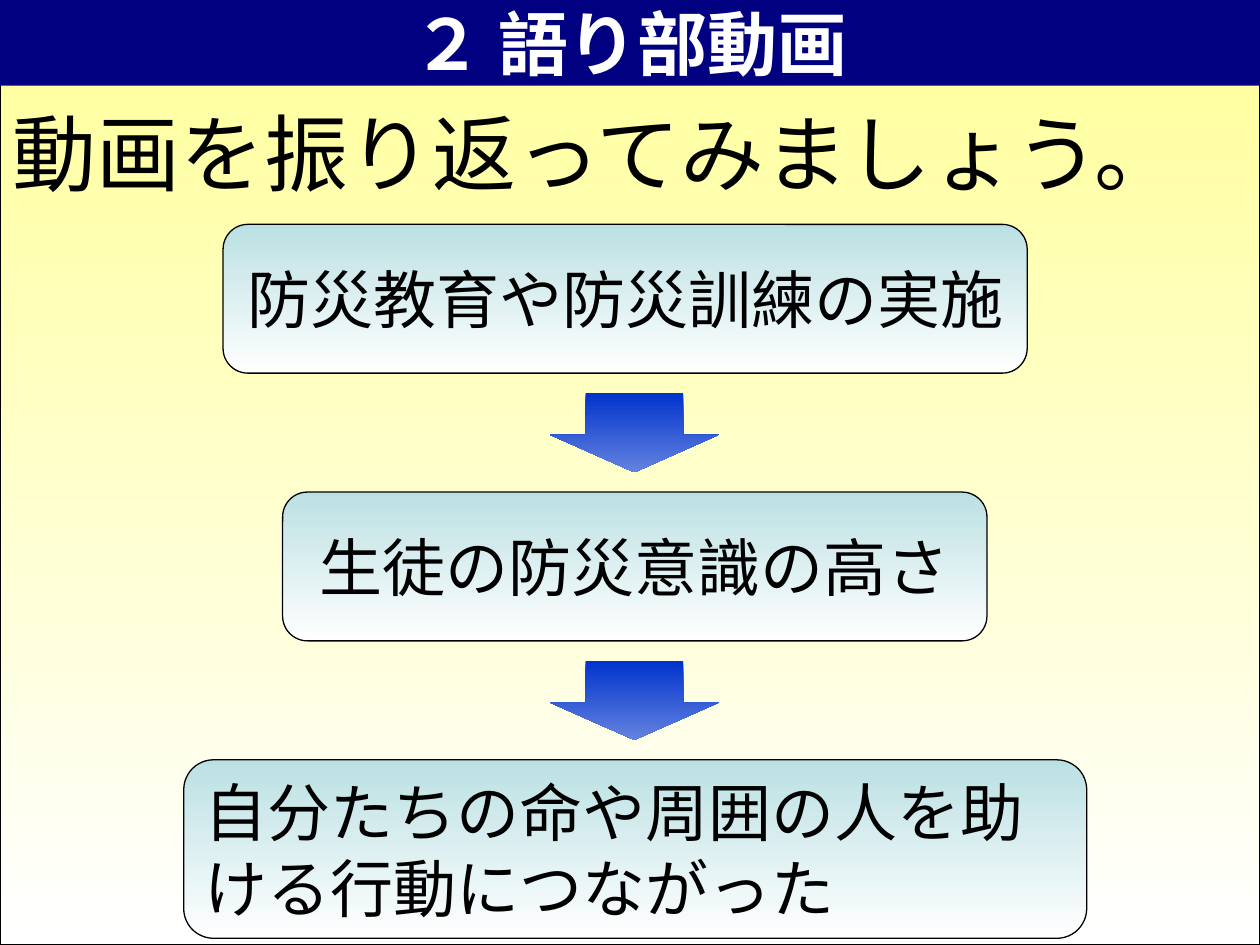
from pptx import Presentation
from pptx.dml.color import RGBColor
from pptx.enum.shapes import MSO_SHAPE
from pptx.enum.text import MSO_ANCHOR, PP_ALIGN
from pptx.oxml.ns import qn
from pptx.util import Pt
from lxml import etree

RECT, ROUND, ARROW = MSO_SHAPE.RECTANGLE, MSO_SHAPE.ROUNDED_RECTANGLE, MSO_SHAPE.RIGHT_ARROW
LEFT, CENTER = PP_ALIGN.LEFT, PP_ALIGN.CENTER
TOP, MIDDLE = MSO_ANCHOR.TOP, MSO_ANCHOR.MIDDLE
LATIN, ASIAN = "Arial", "Noto Sans CJK JP"

WIDE, HIGH = 720, 540
TITLE = "２ 語り部動画"
LEAD = "動画を振り返ってみましょう。"
STEPS = [
    ("防災教育や防災訓練の実施", 127.5, 459.5, 85, CENTER, False),
    ("生徒の防災意識の高さ", 161.5, 402.5, 85, CENTER, False),
    ("自分たちの命や周囲の人を助ける行動につながった", 105, 516, 102, LEFT, True),
]
FIRST, PITCH = 128.2, 153
LONG, THICK, GAP = 45.4, 96.5, 11.3


def color(code):
    return RGBColor.from_string(code)


def blend(shape, start, end, angle):
    shape.fill.gradient()
    shape.fill.gradient_angle = angle
    for stop, code in zip(shape.fill.gradient_stops, (start, end)):
        stop.color.rgb = color(code)


def add(kind, x, y, w, h, edge=None):
    shape = slide.shapes.add_shape(kind, Pt(x), Pt(y), Pt(w), Pt(h))
    shape.shadow.inherit = False
    if edge:
        shape.line.color.rgb = color(edge)
        shape.line.width = Pt(0.75)
    else:
        shape.line.fill.background()
    return shape


def write(shape, text, size, ink="000000", align=LEFT, anchor=MIDDLE,
          wrap=True, bold=False, face=LATIN):
    frame = shape.text_frame
    frame.word_wrap = wrap
    frame.vertical_anchor = anchor
    para = frame.paragraphs[0]
    para.alignment = align
    run = para.add_run()
    run.text = text
    font = run.font
    font.name, font.size, font.bold = face, Pt(size), bold
    font.color.rgb = color(ink)
    east = etree.SubElement(run._r.get_or_add_rPr(), qn("a:ea"))
    east.set("typeface", ASIAN)


deck = Presentation()
deck.slide_width, deck.slide_height = Pt(WIDE), Pt(HIGH)
slide = deck.slides.add_slide(deck.slide_layouts[6])

back = add(RECT, 0, 0, WIDE, HIGH, "000000")
blend(back, "FFFF99", "FFFFFF", 270)

bar = add(RECT, 0, 0, WIDE, 49)
bar.fill.solid()
bar.fill.fore_color.rgb = color("000080")
write(bar, TITLE, 40, "FFFFFF", CENTER, bold=True)

lead = slide.shapes.add_textbox(Pt(0), Pt(54.7), Pt(WIDE), Pt(65))
write(lead, LEAD, 48, anchor=TOP, face=ASIAN)

for i, (text, x, w, h, align, wrap) in enumerate(STEPS):
    y = FIRST + i * PITCH
    box = add(ROUND, x, y, w, h, "000000")
    box.adjustments[0] = 0.167
    blend(box, "BBE0E3", "FFFFFF", 270)
    write(box, text, 36, align=align, wrap=wrap)
    if i < len(STEPS) - 1:
        mid = y + h + GAP + LONG / 2
        arrow = add(ARROW, (WIDE + 5 - LONG) / 2, mid - THICK / 2, LONG, THICK)
        arrow.rotation = 90
        arrow.adjustments[0] = 0.577
        arrow.adjustments[1] = 0.471
        blend(arrow, "0033CC", "6482DF", 0)

deck.save("out.pptx")
